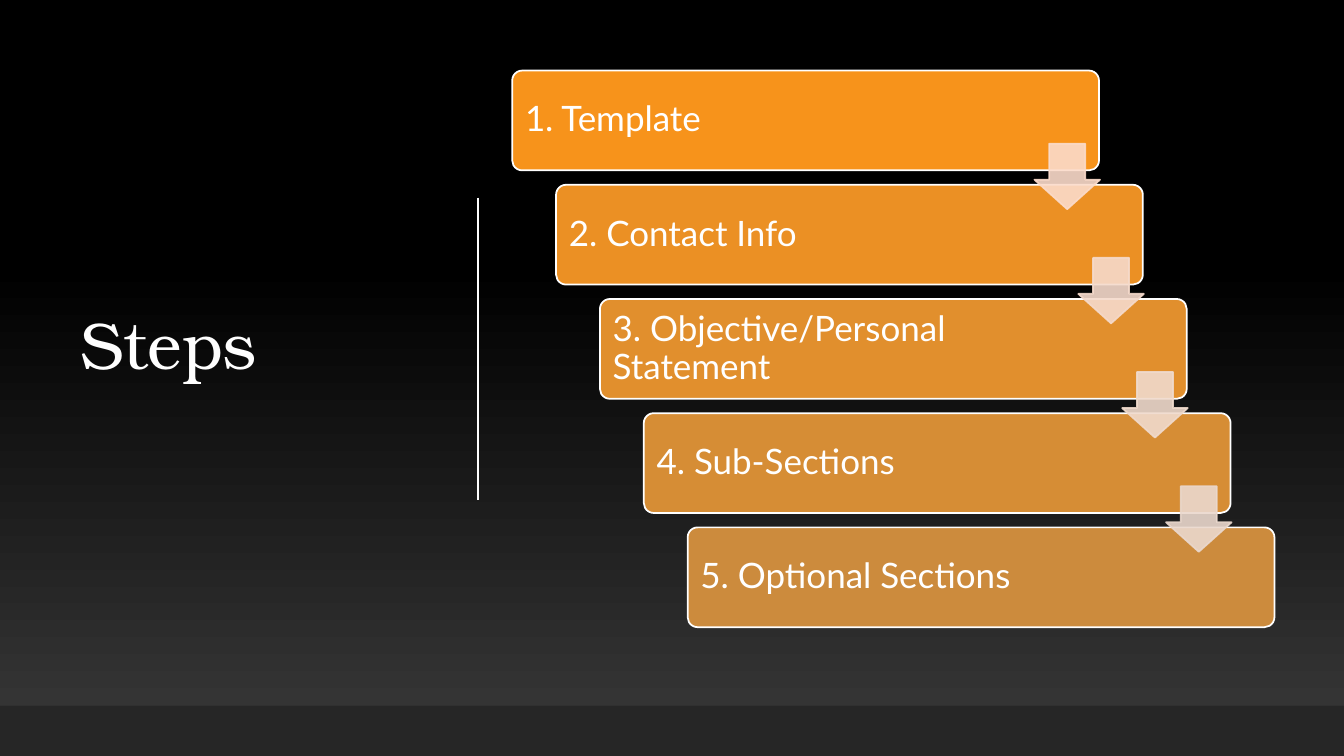
from lxml import etree
from pptx import Presentation
from pptx.dml.color import RGBColor
from pptx.enum.shapes import MSO_CONNECTOR, MSO_SHAPE
from pptx.enum.text import MSO_ANCHOR, PP_ALIGN
from pptx.oxml.ns import qn
from pptx.util import Inches, Pt

RECTANGLE = MSO_SHAPE.RECTANGLE
ROUNDED = MSO_SHAPE.ROUNDED_RECTANGLE
DOWN_ARROW = MSO_SHAPE.DOWN_ARROW
STRAIGHT = MSO_CONNECTOR.STRAIGHT
MIDDLE = MSO_ANCHOR.MIDDLE
LEFT = PP_ALIGN.LEFT

COLUMNS, ROWS = 133.3, 75
STEP_COLUMNS, STEP_ROWS = 4.35, 11.33
STEPS = [
    ("1. Template", "F7931B"),
    ("2. Contact Info", "EB9024"),
    ("3. Objective/Personal Statement", "E18F2D"),
    ("4. Sub-Sections", "D68D35"),
    ("5. Optional Sections", "CC8B3D"),
]
ARROW_COLOURS = ["FBDBCA", "F5DACB", "F0DACC", "EAD8CD"]


def colour(code):
    return RGBColor.from_string(code)


def cells(count):
    return Inches(count / 10)


class StepsSlide:
    title_font = "TeX Gyre Bonum"
    body_font = "Lato"
    title_colour = "FEFEFE"
    white = "FFFFFF"

    def __init__(self, deck):
        self.page = deck.slides.add_slide(deck.slide_layouts[5])

    def background(self, bottom, top, top_share):
        fill = self.page.background.fill
        fill.gradient()
        fill.gradient_angle = 90
        for stop, code, share in zip(fill.gradient_stops, (bottom, top), (0, top_share)):
            stop.color.rgb = colour(code)
            stop.position = share

    def set_text(self, box, text, font, size, code):
        frame = box.text_frame
        frame.word_wrap = True
        frame.vertical_anchor = MIDDLE
        para = frame.paragraphs[0]
        para.text = text
        para.alignment = LEFT
        para.line_spacing = 0.9
        para.font.name = font
        para.font.size = Pt(size)
        para.font.color.rgb = colour(code)

    def title(self, text, left, top, width, height):
        box = self.page.shapes.title
        box.left, box.top = cells(left), cells(top)
        box.width, box.height = cells(width), cells(height)
        self.set_text(box, text, self.title_font, 47, self.title_colour)

    def rule(self, column, top, bottom):
        line = self.page.shapes.add_connector(
            STRAIGHT, cells(column), cells(top), cells(column), cells(bottom))
        line.line.color.rgb = colour(self.title_colour)
        line.line.width = Pt(1)
        etree.SubElement(line._element.spPr, qn("a:effectLst"))

    def shape(self, kind, left, top, width, height, fill, outline=None):
        box = self.page.shapes.add_shape(
            kind, cells(left), cells(top), cells(width), cells(height))
        box.shadow.inherit = False
        box.fill.solid()
        box.fill.fore_color.rgb = colour(fill)
        if outline:
            box.line.color.rgb = colour(outline)
            box.line.width = Pt(1.25)
        else:
            box.line.fill.background()
        return box

    def step(self, index, text, fill):
        box = self.shape(ROUNDED, 50.8 + index * STEP_COLUMNS, 7 + index * STEP_ROWS,
                         58.2, 9.9, fill, self.white)
        box.adjustments[0] = 0.1
        frame = box.text_frame
        frame.margin_left = frame.margin_top = frame.margin_bottom = cells(1)
        frame.margin_right = cells(11.8)
        self.set_text(box, text, self.body_font, 25, self.white)

    def arrow(self, index, fill):
        arrow = self.shape(DOWN_ARROW, 102.6 + index * STEP_COLUMNS,
                           14.25 + index * STEP_ROWS, 6.5, 6.5, fill, fill)
        arrow.adjustments[0], arrow.adjustments[1] = 0.55, 0.45
        for tint in arrow._element.spPr.iter(qn("a:srgbClr")):
            etree.SubElement(tint, qn("a:alpha"), val="90000")


def main():
    deck = Presentation()
    deck.slide_width, deck.slide_height = cells(COLUMNS), cells(ROWS)
    slide = StepsSlide(deck)
    slide.background("3A3A3A", "000000", 0.65)
    slide.title("Steps", 7, 6.9, 36.9, 55.3)
    slide.rule(47.4, 19.6, 49.6)
    slide.shape(RECTANGLE, 0, 70, COLUMNS, 5, "262626")
    for index, (text, fill) in enumerate(STEPS):
        slide.step(index, text, fill)
    for index, fill in enumerate(ARROW_COLOURS):
        slide.arrow(index, fill)
    deck.save("out.pptx")


if __name__ == "__main__":
    main()
